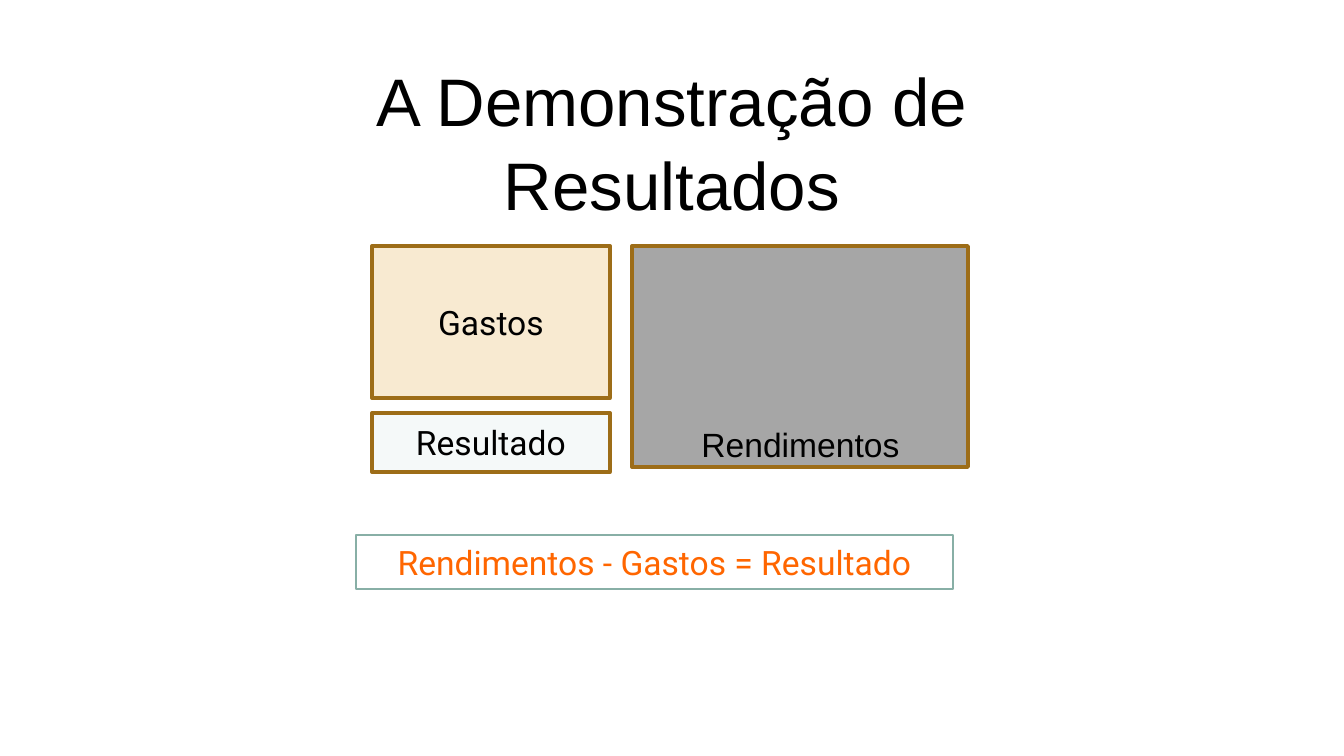
from dataclasses import dataclass
from typing import Optional

import pptx
import pptx.dml.color
import pptx.enum.shapes
import pptx.enum.text
import pptx.util

EMU_PER_PX = 914400 / 134.4
SLIDE_WIDTH, SLIDE_HEIGHT = 1344, 756
ANCHOR = pptx.enum.text.MSO_ANCHOR


@dataclass(frozen=True)
class Theme:
    black: str = "000000"
    brown: str = "9D6D18"
    cream: str = "F8EAD1"
    gray: str = "A6A6A6"
    ice: str = "F5F9F9"
    sage: str = "88AFA6"
    orange: str = "FF6600"
    heading_font: str = "Arial"
    body_font: str = "Roboto"
    title_size: int = 36
    body_size: int = 18
    thick: float = 2
    thin: float = 0.75


THEME = Theme()


@dataclass(frozen=True)
class Box:
    left: int
    top: int
    width: int
    height: int
    text: str = ""
    fill: Optional[str] = None
    line: Optional[str] = None
    line_width: float = THEME.thick
    font: str = THEME.body_font
    size: int = THEME.body_size
    color: str = THEME.black
    anchor: ANCHOR = ANCHOR.TOP
    inset_x: int = 13
    inset_y: int = 7
    line_spacing: float = 1.0


LEFT_COLUMN, COLUMN_TOP, LEFT_WIDTH = 372, 246, 238
MARGIN_LEFT = 356

BOXES = [
    Box(LEFT_COLUMN, COLUMN_TOP, LEFT_WIDTH, 152, "Gastos",
        fill=THEME.cream, line=THEME.brown, anchor=ANCHOR.MIDDLE),
    Box(632, COLUMN_TOP, 336, 221, fill=THEME.gray, line=THEME.brown),
    Box(669, 417, 263, 54, "Rendimentos", font=THEME.heading_font),
    Box(LEFT_COLUMN, 413, LEFT_WIDTH, 59, "Resultado",
        fill=THEME.ice, line=THEME.brown, anchor=ANCHOR.MIDDLE),
    Box(MARGIN_LEFT, 535, 597, 54, "Rendimentos - Gastos = Resultado",
        line=THEME.sage, line_width=THEME.thin, color=THEME.orange),
    Box(MARGIN_LEFT, 42, 632, 109, "A Demonstração de Resultados",
        font=THEME.heading_font, size=THEME.title_size, inset_y=13,
        line_spacing=1.05),
]


def px(length: int) -> pptx.util.Emu:
    return pptx.util.Emu(round(length * EMU_PER_PX))


def rgb(color: str) -> pptx.dml.color.RGBColor:
    return pptx.dml.color.RGBColor.from_string(color)


def apply_format(target: object, values: dict) -> None:
    for name, value in values.items():
        setattr(target, name, value)


def write_text(shape: pptx.shapes.autoshape.Shape, box: Box) -> None:
    frame = shape.text_frame
    apply_format(frame, {
        "word_wrap": True,
        "vertical_anchor": box.anchor,
        "margin_left": px(box.inset_x),
        "margin_right": px(box.inset_x),
        "margin_top": px(box.inset_y),
        "margin_bottom": px(box.inset_y),
    })
    paragraph = frame.paragraphs[0]
    apply_format(paragraph, {
        "alignment": pptx.enum.text.PP_ALIGN.CENTER,
        "line_spacing": box.line_spacing,
    })
    run = paragraph.add_run()
    run.text = box.text
    apply_format(run.font, {"name": box.font, "size": pptx.util.Pt(box.size)})
    run.font.color.rgb = rgb(box.color)


def draw_box(slide: pptx.slide.Slide, box: Box) -> None:
    place = [px(length) for length in (box.left, box.top, box.width, box.height)]
    if box.fill or box.line:
        rectangle = pptx.enum.shapes.MSO_SHAPE.RECTANGLE
        shape = slide.shapes.add_shape(rectangle, *place)
        shape.shadow.inherit = False
        shape.line.color.rgb = rgb(box.line)
        shape.line.width = pptx.util.Pt(box.line_width)
        if box.fill:
            shape.fill.solid()
            shape.fill.fore_color.rgb = rgb(box.fill)
        else:
            shape.fill.background()
    else:
        shape = slide.shapes.add_textbox(*place)
    if box.text:
        write_text(shape, box)


def main() -> None:
    presentation = pptx.Presentation()
    apply_format(presentation, {
        "slide_width": px(SLIDE_WIDTH),
        "slide_height": px(SLIDE_HEIGHT),
    })
    slide = presentation.slides.add_slide(presentation.slide_layouts[6])
    for box in BOXES:
        draw_box(slide, box)
    presentation.save("out.pptx")


if __name__ == "__main__":
    main()
